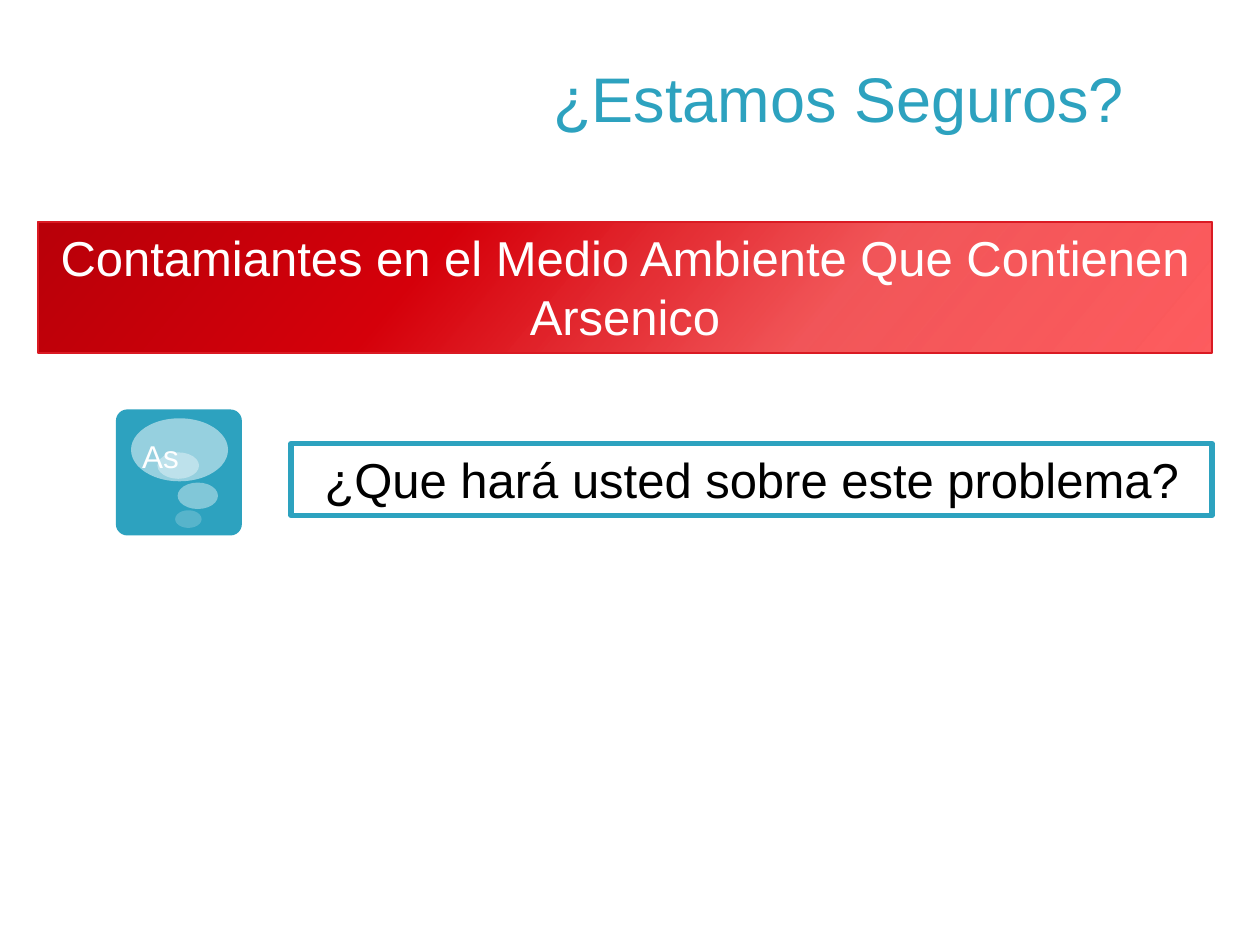
from lxml import etree
from pptx import Presentation
from pptx.dml.color import RGBColor
from pptx.enum.shapes import MSO_SHAPE
from pptx.enum.text import MSO_ANCHOR, PP_ALIGN
from pptx.oxml.ns import qn
from pptx.util import Inches, Pt

RECT, ROUND, OVAL = MSO_SHAPE.RECTANGLE, MSO_SHAPE.ROUNDED_RECTANGLE, MSO_SHAPE.OVAL
LEFT, CENTER, RIGHT = PP_ALIGN.LEFT, PP_ALIGN.CENTER, PP_ALIGN.RIGHT
TOP, BOTTOM = MSO_ANCHOR.TOP, MSO_ANCHOR.BOTTOM

TEAL, WHITE, BLACK, RED = "2DA2BF", "FFFFFF", "000000", "DA1A23"
REDS = [(0, "FD4144", 85), (33, "F14E51", 95), (67, "D5000A", 100), (100, "B80009", 100)]
BUBBLES = [
    (1.04, 3.32, 0.77, 0.5, 50),
    (1.41, 3.83, 0.32, 0.21, 40),
    (1.39, 4.05, 0.21, 0.14, 20),
    (1.25, 3.59, 0.33, 0.21, 38),
]


def color(code):
    return RGBColor.from_string(code)


def fade(node, alpha):
    etree.SubElement(node, qn("a:alpha"), val=str(alpha * 1000))


class Deck:
    """Holds the style and the current slide."""

    font = "Arial"

    def __init__(self):
        self.prs = Presentation()
        self.prs.slide_width, self.prs.slide_height = Inches(10), Inches(7.5)
        self.slide = self.prs.slides.add_slide(self.prs.slide_layouts[6])

    def shape(self, kind, box, fill=None, alpha=100, line=None, width=1):
        item = self.slide.shapes.add_shape(kind, *map(Inches, box))
        item.shadow.inherit = False
        if fill:
            item.fill.solid()
            item.fill.fore_color.rgb = color(fill)
            if alpha < 100:
                fade(item.element.spPr.find(".//" + qn("a:srgbClr")), alpha)
        if line:
            item.line.color.rgb = color(line)
            item.line.width = Pt(width)
        else:
            item.line.fill.background()
        return item

    def blend(self, item, stops, angle):
        item.fill.gradient()
        item.fill.gradient_angle = angle
        group = item.element.spPr.find(".//" + qn("a:gsLst"))
        for old in list(group):
            group.remove(old)
        for pos, code, alpha in stops:
            stop = etree.SubElement(group, qn("a:gs"), pos=str(pos * 1000))
            fade(etree.SubElement(stop, qn("a:srgbClr"), val=code), alpha)

    def text(self, item, words, size, code, align=LEFT, anchor=TOP, wrap=True):
        frame = item.text_frame
        frame.word_wrap, frame.vertical_anchor = wrap, anchor
        para = frame.paragraphs[0]
        para.alignment = align
        run = para.add_run()
        run.text = words
        style = {"name": self.font, "size": Pt(size)}
        for key, value in style.items():
            setattr(run.font, key, value)
        run.font.color.rgb = color(code)

    def label(self, box, *args, **style):
        self.text(self.slide.shapes.add_textbox(*map(Inches, box)), *args, **style)


def main():
    deck = Deck()
    tile = deck.shape(ROUND, (0.92, 3.25, 1, 1), TEAL)
    tile.adjustments[0] = 0.09
    for *box, alpha in BUBBLES:
        deck.shape(OVAL, box, WHITE, alpha)

    deck.label((3.75, 0.33, 5.41, 0.79), "¿Estamos Seguros? ", 36, TEAL,
               align=RIGHT, anchor=BOTTOM)

    banner = deck.shape(RECT, (0.3, 1.76, 9.32, 1.04), line=RED)
    deck.blend(banner, REDS, 140)
    deck.text(banner, "Contamiantes en el Medio Ambiente Que Contienen Arsenico",
              28, WHITE, CENTER)

    deck.label((1.03, 3.42, 0.51, 0.4), "As", 18, WHITE)

    ask = deck.shape(RECT, (2.31, 3.52, 7.31, 0.57), WHITE, line=TEAL, width=3)
    deck.text(ask, "¿Que hará usted sobre este problema?", 28, BLACK, CENTER, wrap=False)
    deck.prs.save("out.pptx")


if __name__ == "__main__":
    main()
